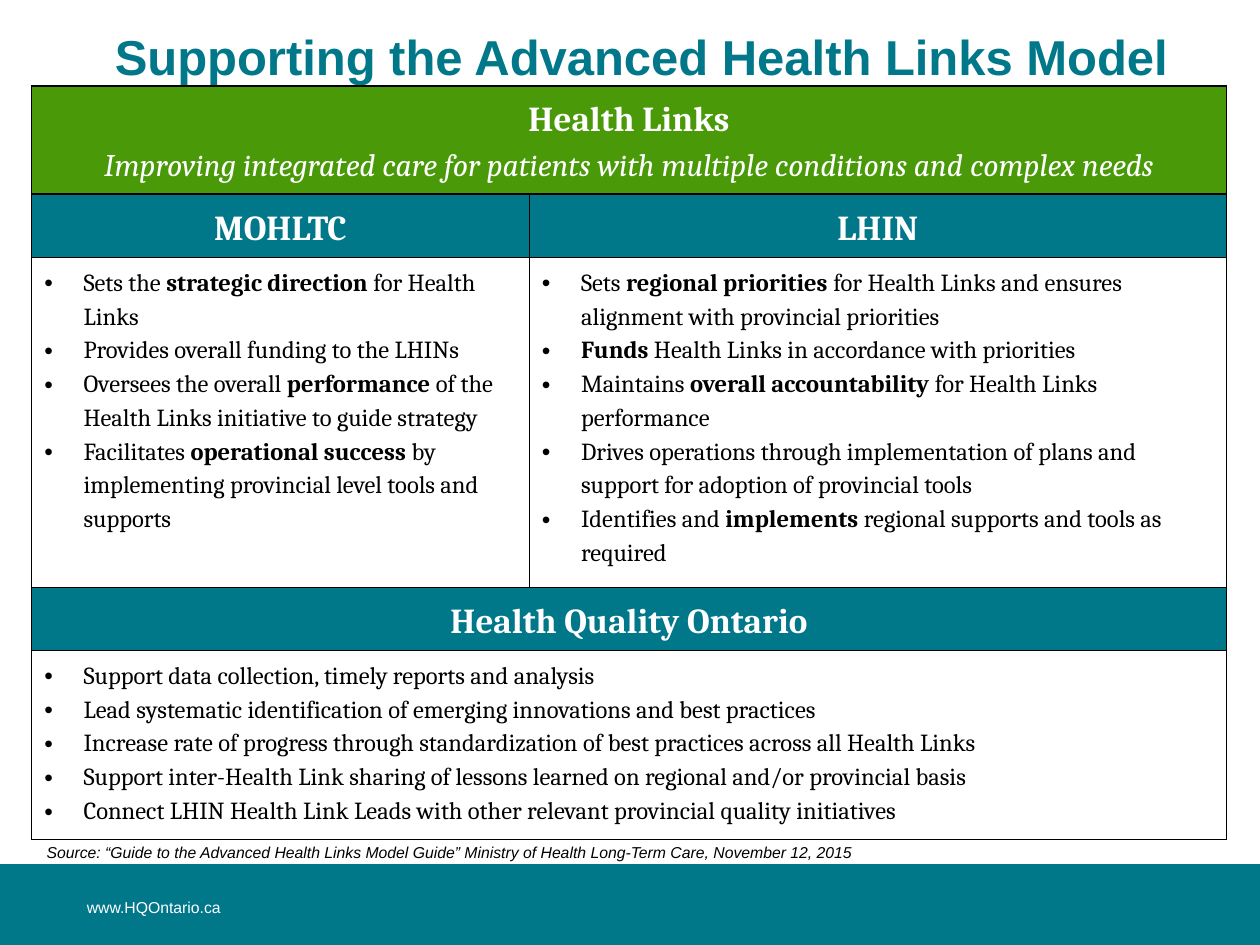
from lxml import etree
from pptx import Presentation
from pptx.dml.color import RGBColor
from pptx.enum.shapes import MSO_SHAPE
from pptx.enum.text import MSO_ANCHOR, PP_ALIGN
from pptx.oxml import parse_xml
from pptx.oxml.ns import nsdecls, qn
from pptx.util import Cm, Pt

RECTANGLE = MSO_SHAPE.RECTANGLE
MIDDLE = MSO_ANCHOR.MIDDLE
TOP = MSO_ANCHOR.TOP
CENTER = PP_ALIGN.CENTER
LEFT = PP_ALIGN.LEFT
TEAL = "00788A"
GREEN = "499908"
WHITE = "FFFFFF"
BLACK = "000000"


def color(value):
    return RGBColor.from_string(value)


def add_run(paragraph, text, size, font_name, font_color, bold=False, italic=False):
    run = paragraph.add_run()
    run.text = text
    run.font.size = Pt(size)
    run.font.name = font_name
    run.font.color.rgb = color(font_color)
    run.font.bold = bold
    run.font.italic = italic


presentation = Presentation()
presentation.slide_width = Cm(25.4)
presentation.slide_height = Cm(19.05)
slide = presentation.slides.add_slide(presentation.slide_layouts[6])

footer = slide.shapes.add_shape(RECTANGLE, Cm(0), Cm(17.42), Cm(25.5), Cm(1.7))
footer.shadow.inherit = False
footer.fill.solid()
footer.fill.fore_color.rgb = color(TEAL)
footer.line.fill.background()

source = "Source: “Guide to the Advanced Health Links Model Guide” Ministry of Health Long-Term Care, November 12, 2015"
text_boxes = [
    ("Supporting the Advanced Health Links Model", (1.5, 0, 22.86, 2.26), 28, TEAL, True, False, CENTER, MIDDLE, True),
    ("www.HQOntario.ca", (1.5, 17.98, 7.82, 0.69), 9, WHITE, False, False, LEFT, TOP, True),
    (source, (0.69, 16.87, 17.02, 0.64), 9, BLACK, False, True, LEFT, MIDDLE, False),
]
for text, position, size, font_color, bold, italic, alignment, anchor, wrap in text_boxes:
    text_box = slide.shapes.add_textbox(*[Cm(length) for length in position])
    text_box.text_frame.word_wrap = wrap
    text_box.text_frame.vertical_anchor = anchor
    paragraph = text_box.text_frame.paragraphs[0]
    paragraph.alignment = alignment
    add_run(paragraph, text, size, "Arial", font_color, bold, italic)

column_widths = [10.03, 14.05]
row_heights = [2.13, 1.24, 6.48, 1.24, 3.71]
table = slide.shapes.add_table(
    len(row_heights), len(column_widths), Cm(0.64), Cm(1.73), Cm(sum(column_widths)), Cm(sum(row_heights))
).table
for column, width in zip(table.columns, column_widths):
    column.width = Cm(width)
for row, height in zip(table.rows, row_heights):
    row.height = Cm(height)

row_fills = [GREEN, TEAL, WHITE, TEAL, WHITE]
for row, fill_color in zip(table.rows, row_fills):
    for cell in row.cells:
        cell.fill.solid()
        cell.fill.fore_color.rgb = color(fill_color)
        properties = cell._tc.get_or_add_tcPr()
        for index, side in enumerate(["lnL", "lnR", "lnT", "lnB"]):
            border = parse_xml(f'<a:{side} {nsdecls("a")} w="12700"/>')
            solid_fill = etree.SubElement(border, qn("a:solidFill"))
            etree.SubElement(solid_fill, qn("a:srgbClr"), val=BLACK)
            properties.insert(index, border)

for row_index in [0, 3, 4]:
    table.cell(row_index, 0).merge(table.cell(row_index, 1))

headings = {
    (0, 0): "Health Links",
    (1, 0): "MOHLTC",
    (1, 1): "LHIN",
    (3, 0): "Health Quality Ontario",
}
for (row_index, column_index), text in headings.items():
    paragraph = table.cell(row_index, column_index).text_frame.paragraphs[0]
    paragraph.alignment = CENTER
    paragraph.line_spacing = 1.2
    add_run(paragraph, text, 20, "Cambria", WHITE, bold=True)

subtitle = table.cell(0, 0).text_frame.add_paragraph()
subtitle.alignment = CENTER
subtitle.line_spacing = 1.2
add_run(
    subtitle,
    "Improving integrated care for patients with multiple conditions and complex needs",
    18, "Cambria", WHITE, italic=True,
)

bullet_lists = {
    (2, 0): [
        "Sets the *strategic direction *for Health Links",
        "Provides overall funding to the LHINs",
        "Oversees the overall *performance *of the Health Links initiative to guide strategy",
        "Facilitates *operational success *by implementing provincial level tools and supports",
    ],
    (2, 1): [
        "Sets *regional priorities *for Health Links and ensures alignment with provincial priorities",
        "*Funds* Health Links in accordance with priorities",
        "Maintains *overall accountability *for Health Links performance",
        "Drives operations through implementation of plans and support for adoption of provincial tools",
        "Identifies and *implements* regional supports and tools as required",
    ],
    (4, 0): [
        "Support data collection, timely reports and analysis",
        "Lead systematic identification of emerging innovations and best practices",
        "Increase rate of progress through standardization of best practices across all Health Links",
        "Support inter-Health Link sharing of lessons learned on regional and/or provincial basis",
        "Connect LHIN Health Link Leads with other relevant provincial quality initiatives",
    ],
}
indent = Cm(0.79)
for (row_index, column_index), items in bullet_lists.items():
    text_frame = table.cell(row_index, column_index).text_frame
    for item_index, item in enumerate(items):
        paragraph = text_frame.add_paragraph() if item_index else text_frame.paragraphs[0]
        paragraph.line_spacing = 1.2
        properties = paragraph._p.get_or_add_pPr()
        properties.set("marL", str(indent))
        properties.set("indent", str(-indent))
        etree.SubElement(properties, qn("a:buFont"), typeface="Arial")
        etree.SubElement(properties, qn("a:buChar"), char="•")
        for part_index, part in enumerate(item.split("*")):
            if part:
                add_run(paragraph, part, 14, "Cambria", BLACK, bold=part_index % 2 == 1)

presentation.save("out.pptx")
